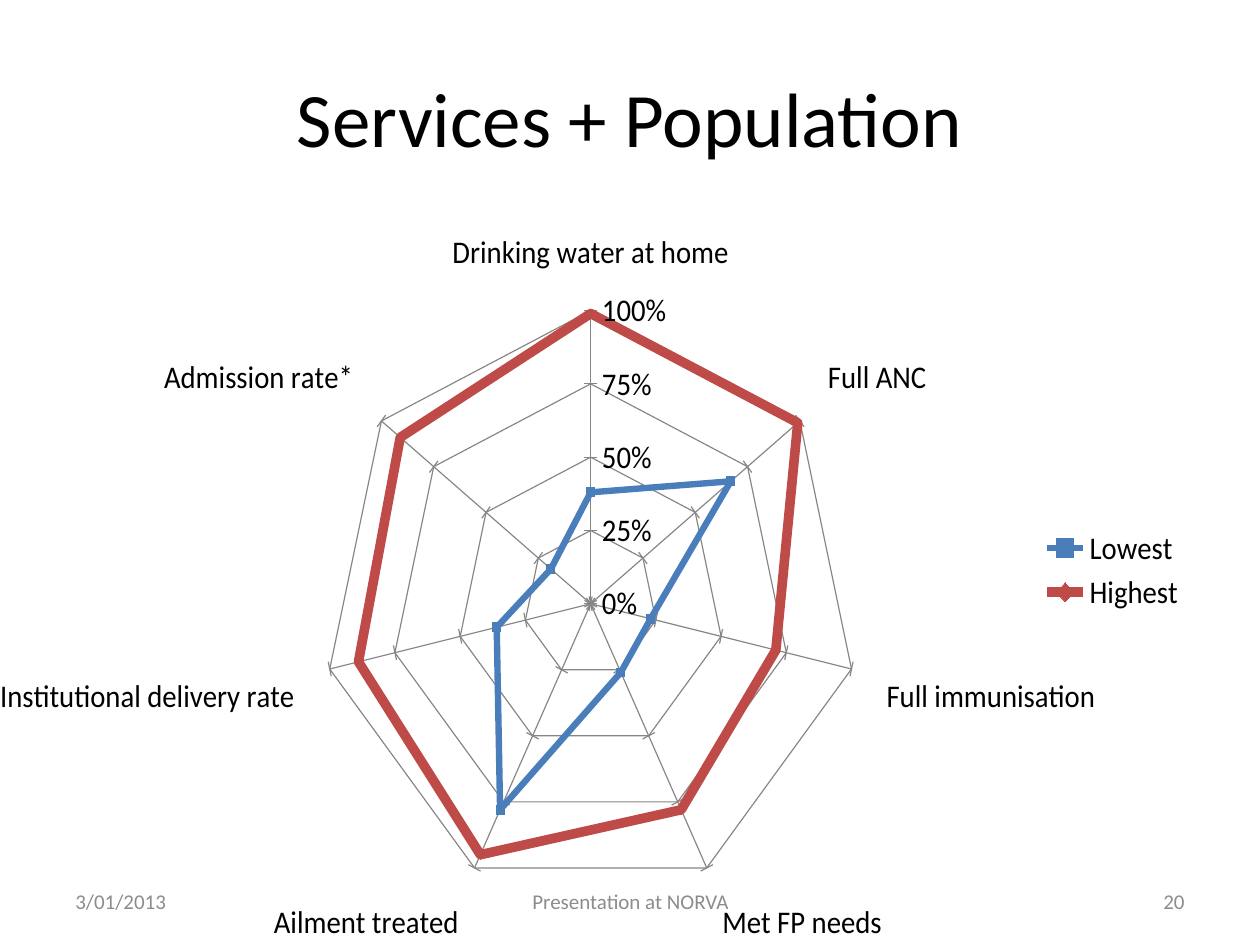
from lxml.etree import SubElement
from pptx import Presentation
from pptx.chart.data import CategoryChartData
from pptx.dml.color import RGBColor
from pptx.enum.chart import XL_CHART_TYPE, XL_LEGEND_POSITION, XL_MARKER_STYLE, XL_TICK_MARK
from pptx.enum.text import MSO_ANCHOR, PP_ALIGN
from pptx.oxml.ns import qn
from pptx.util import Inches, Pt

BLACK = RGBColor(0x00, 0x00, 0x00)
GRAY = RGBColor(0x8C, 0x8C, 0x8C)
GRID = RGBColor(0x86, 0x86, 0x86)
BLUE = RGBColor(0x4A, 0x7E, 0xBB)
RED = RGBColor(0xBE, 0x4B, 0x48)

SERVICES = ["Drinking water at home", "Full ANC", "Full immunisation", "Met FP needs",
            "Ailment treated", "Institutional delivery rate", "Admission rate*"]
# name, values, colour, line width in points, marker
GROUPS = [
    ("Lowest", [0.38, 0.67, 0.23, 0.26, 0.78, 0.36, 0.19], BLUE, 4, XL_MARKER_STYLE.SQUARE),
    ("Highest", [0.99, 0.99, 0.71, 0.78, 0.95, 0.89, 0.91], RED, 6, XL_MARKER_STYLE.DIAMOND),
]
FOOTER = [
    (0.5, 2.33, "3/01/2013", PP_ALIGN.LEFT),
    (3.42, 3.17, "Presentation at NORVA", PP_ALIGN.CENTER),
    (7.17, 2.33, "20", PP_ALIGN.RIGHT),
]


class SlideBuilder:
    font_name = "Calibri"

    def __init__(self, slide):
        self.slide = slide

    def add_text(self, left, top, width, height, text, size, color, alignment):
        box = self.slide.shapes.add_textbox(
            Inches(left), Inches(top), Inches(width), Inches(height))
        frame = box.text_frame
        frame.word_wrap = True
        frame.vertical_anchor = MSO_ANCHOR.MIDDLE
        paragraph = frame.paragraphs[0]
        paragraph.alignment = alignment
        run = paragraph.add_run()
        run.text = text
        run.font.name = self.font_name
        run.font.size = Pt(size)
        run.font.color.rgb = color

    def add_radar(self, left, top, width, height, categories, groups, plot_area):
        data = CategoryChartData(number_format="0%")
        data.categories = categories
        for name, values, *_ in groups:
            data.add_series(name, values)
        chart = self.slide.shapes.add_chart(
            XL_CHART_TYPE.RADAR_MARKERS, Inches(left), Inches(top),
            Inches(width), Inches(height), data).chart
        chart.has_title = False
        chart.font.name = self.font_name
        chart.font.size = Pt(18)
        chart.font.color.rgb = BLACK
        chart.has_legend = True
        chart.legend.position = XL_LEGEND_POSITION.RIGHT
        chart.legend.include_in_layout = False
        chart.plots[0].vary_by_categories = False

        for axis in (chart.category_axis, chart.value_axis):
            axis.has_major_gridlines = True
            axis.major_tick_mark = XL_TICK_MARK.CROSS
            for line in (axis.major_gridlines.format.line, axis.format.line):
                line.color.rgb = GRID
                line.width = Pt(0.75)
        value_axis = chart.value_axis
        value_axis.minimum_scale = 0
        value_axis.maximum_scale = 1
        value_axis.major_unit = 0.25
        value_axis.tick_labels.number_format = "0%"
        value_axis.tick_labels.number_format_is_linked = False

        for series, (_, _, color, line_width, marker) in zip(chart.plots[0].series, groups):
            series.smooth = False
            series.format.line.color.rgb = color
            series.format.line.width = Pt(line_width)
            series.marker.style = marker
            series.marker.size = 5
            series.marker.format.fill.solid()
            series.marker.format.fill.fore_color.rgb = color
            series.marker.format.line.color.rgb = color
        self.place_plot(chart, plot_area)

    def place_plot(self, chart, plot_area):
        """Fix the inner plot area, given as fractions of the chart."""
        plot = chart.plots[0]._element.getparent()
        for layout in plot.findall(qn("c:layout")):
            plot.remove(layout)
        layout = SubElement(plot, qn("c:layout"))
        plot.insert(0, layout)
        manual = SubElement(layout, qn("c:manualLayout"))
        settings = [("layoutTarget", "inner"), ("xMode", "edge"), ("yMode", "edge")]
        settings += zip("xywh", plot_area)
        for tag, value in settings:
            SubElement(manual, qn(f"c:{tag}")).set("val", str(value))


def main():
    presentation = Presentation()
    presentation.slide_width = Inches(10)
    presentation.slide_height = Inches(7.5)
    builder = SlideBuilder(presentation.slides.add_slide(presentation.slide_layouts[6]))
    builder.add_text(0.5, 0.3, 9, 1.25, "Services + Population", 44, BLACK, PP_ALIGN.CENTER)
    builder.add_radar(0, 1.55, 9.5, 5.95, SERVICES, GROUPS, (0.2, 0.15, 0.49, 0.79))
    for left, width, text, alignment in FOOTER:
        builder.add_text(left, 6.95, width, 0.4, text, 12, GRAY, alignment)
    presentation.save("out.pptx")


if __name__ == "__main__":
    main()
